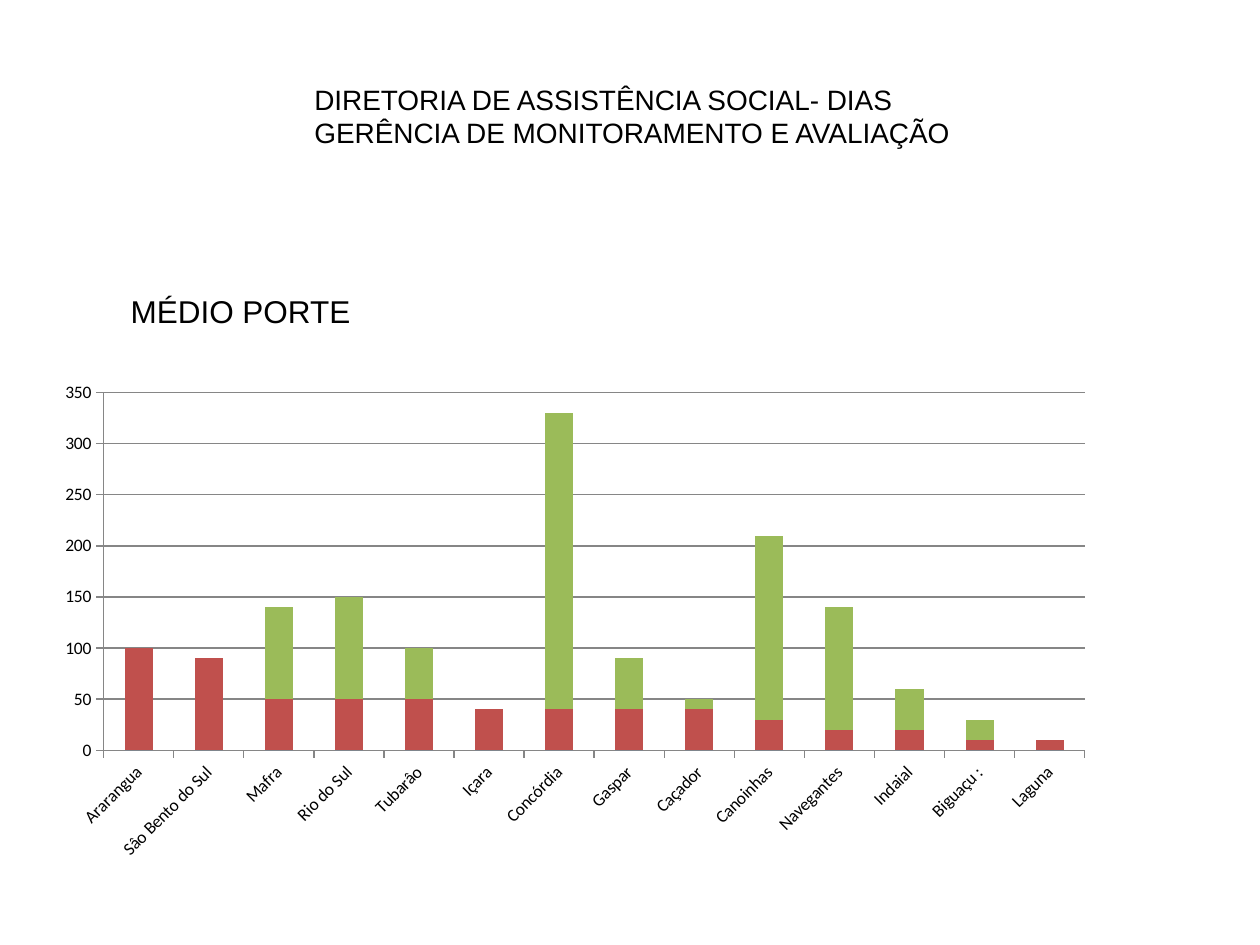
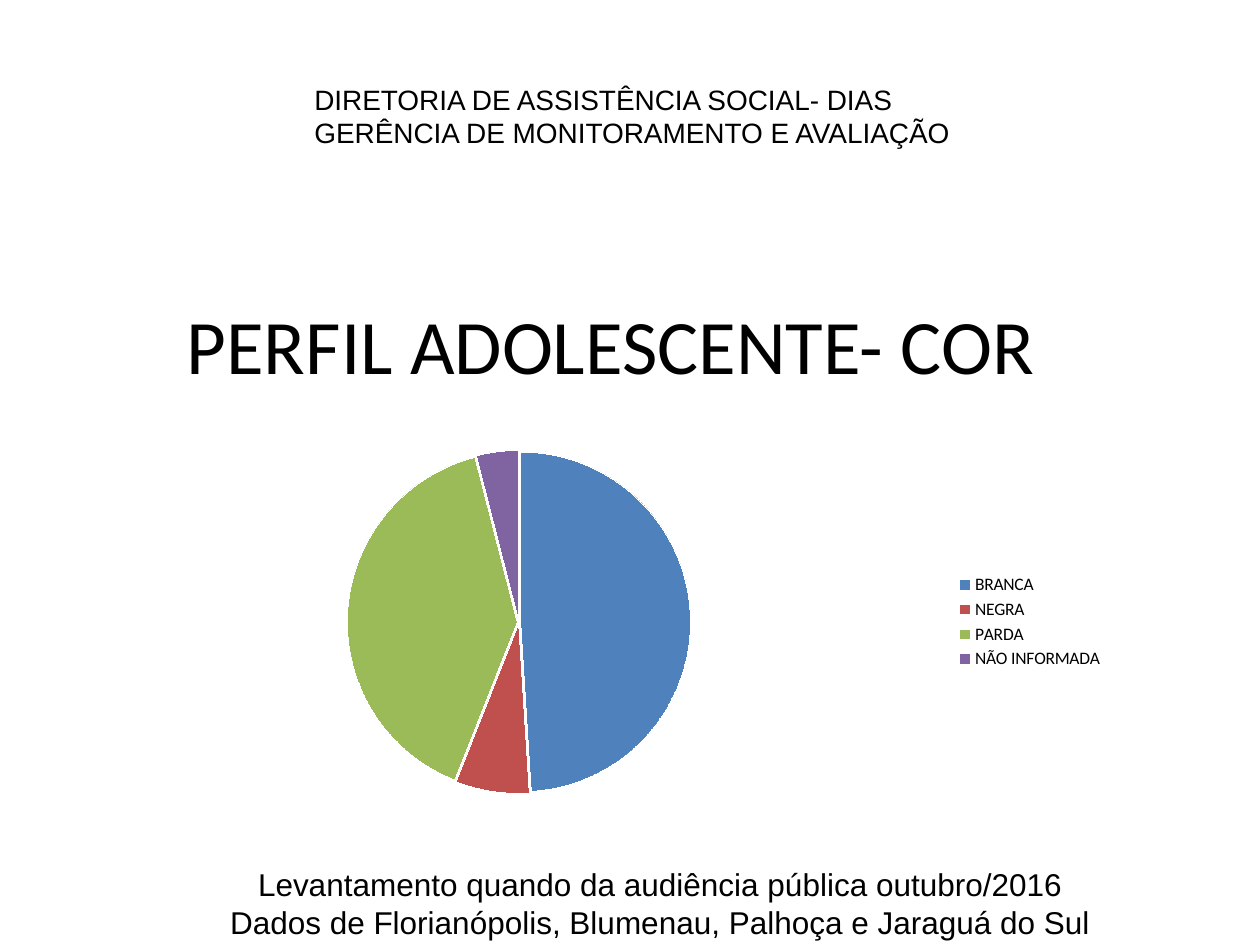
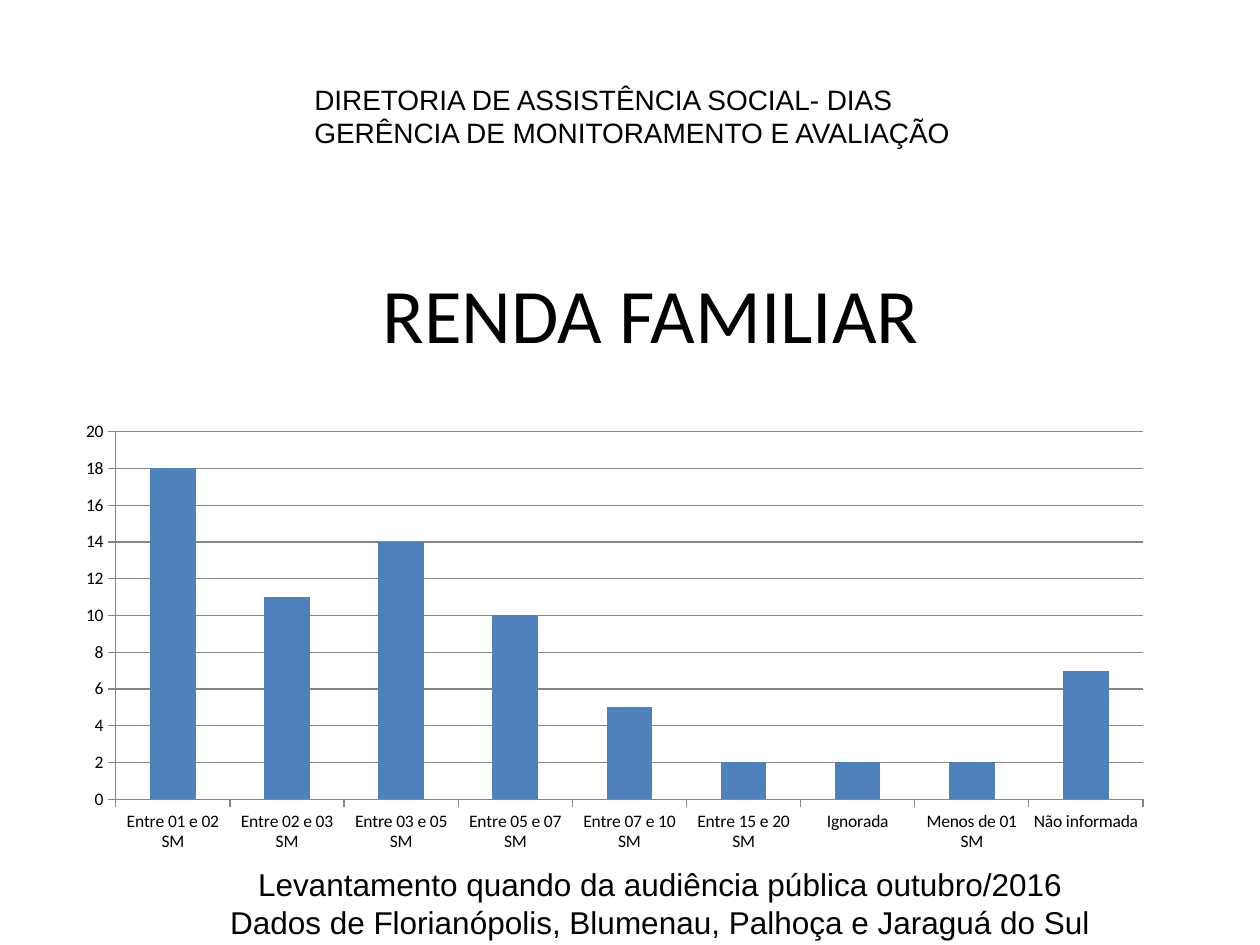
from lxml import etree
from pptx import Presentation
from pptx import util as u
from pptx.chart.data import CategoryChartData
from pptx.dml.color import RGBColor
from pptx.enum import chart as charts
from pptx.enum import text
from pptx.oxml.ns import qn

PX_PER_INCH = 126
TITLE_ONLY = 5

BLACK = RGBColor(0x00, 0x00, 0x00)
WHITE = RGBColor(0xFF, 0xFF, 0xFF)
AXIS_GREY = RGBColor(0x86, 0x86, 0x86)
BLUE = RGBColor(0x4F, 0x81, 0xBD)
RED = RGBColor(0xC0, 0x50, 0x4D)
GREEN = RGBColor(0x9B, 0xBB, 0x59)
PURPLE = RGBColor(0x80, 0x64, 0xA2)
PALETTE = (BLUE, RED, GREEN, PURPLE)

HEADER_BOX = (302, 76, 665, 81)
HEADER = "DIRETORIA DE ASSISTÊNCIA SOCIAL- DIAS\nGERÊNCIA DE MONITORAMENTO E AVALIAÇÃO"
SOURCE_BOX = (144, 859, 1032, 89)
SOURCE = ("Levantamento quando da audiência pública outubro/2016\n"
          "Dados de Florianópolis, Blumenau, Palhoça e Jaraguá do Sul")

CITIES = {
    "Ararangua": (0, 100, 0),
    "Sâo Bento do Sul": (0, 90, 0),
    "Mafra": (0, 50, 90),
    "Rio do Sul": (0, 50, 100),
    "Tubarâo": (0, 50, 50),
    "Içara": (0, 40, 0),
    "Concórdia": (0, 40, 290),
    "Gaspar": (0, 40, 50),
    "Caçador": (0, 40, 10),
    "Canoinhas": (0, 30, 180),
    "Navegantes": (0, 20, 120),
    "Indaial": (0, 20, 40),
    "Biguaçu :": (0, 10, 20),
    "Laguna": (0, 10, 0),
}
SKIN_COLOURS = {"BRANCA": (49,), "NEGRA": (7,), "PARDA": (40,), "NÃO INFORMADA": (4,)}
INCOMES = {
    "Entre 01 e 02 SM": (18,),
    "Entre 02 e 03 SM": (11,),
    "Entre 03 e 05 SM": (14,),
    "Entre 05 e 07 SM": (10,),
    "Entre 07 e 10 SM": (5,),
    "Entre 15 e 20 SM": (2,),
    "Ignorada": (2,),
    "Menos de 01 SM": (2,),
    "Não informada": (7,),
}


def emu(box):
    return [u.Inches(px / PX_PER_INCH) for px in box]


def write(frame, words, size, font="Arial", align=text.PP_ALIGN.LEFT):
    frame.text = words
    for paragraph in frame.paragraphs:
        paragraph.alignment = align
        for run in paragraph.runs:
            run.font.name, run.font.size = font, u.Pt(size)
            run.font.color.rgb = BLACK


def add_text(slide, box, words, size, align=text.PP_ALIGN.LEFT):
    label = slide.shapes.add_textbox(*emu(box))
    label.text_frame.word_wrap = True
    write(label.text_frame, words, size, align=align)
    return label


def add_master_header(prs, slide):
    """Build the header on a slide, then move it to the master all slides share."""
    header = add_text(slide, HEADER_BOX, HEADER, 16)
    prs.slide_master.shapes.element.append(header.element)


def place_title(slide, box, words, size=44, font="Calibri", align=text.PP_ALIGN.CENTER):
    title = slide.shapes.title
    title.left, title.top, title.width, title.height = emu(box)
    title.text_frame.auto_size = text.MSO_AUTO_SIZE.NONE
    title.text_frame.vertical_anchor = text.MSO_ANCHOR.MIDDLE
    write(title.text_frame, words, size, font, align)


def add_source(slide):
    add_text(slide, SOURCE_BOX, SOURCE, 18, text.PP_ALIGN.CENTER)


def add_chart(slide, box, kind, rows):
    """Chart rows of {category: (value of each series, ...)}."""
    data = CategoryChartData()
    data.categories = list(rows)
    for number, values in enumerate(zip(*rows.values()), 1):
        data.add_series(f"Series {number}", values)
    chart = slide.shapes.add_chart(kind, *emu(box), data).chart
    chart.has_title = chart.has_legend = False
    chart.font.name, chart.font.size = "Calibri", u.Pt(10)
    chart.font.color.rgb = BLACK
    return chart


def fill(part, colour):
    part.format.fill.solid()
    part.format.fill.fore_color.rgb = colour


def add_columns(slide, box, kind, rows, top, step):
    chart = add_chart(slide, box, kind, rows)
    plot = chart.plots[0]
    plot.vary_by_categories = False
    plot.gap_width = 150
    if kind == charts.XL_CHART_TYPE.COLUMN_STACKED:
        plot.overlap = 100
    for series, colour in zip(plot.series, PALETTE):
        fill(series, colour)

    scale = chart.value_axis
    scale.minimum_scale, scale.maximum_scale, scale.major_unit = 0, top, step
    scale.has_major_gridlines = True
    for axis in (chart.category_axis, scale):
        axis.major_tick_mark = charts.XL_TICK_MARK.OUTSIDE
    for lined in (chart.category_axis, scale, scale.major_gridlines):
        lined.format.line.color.rgb = AXIS_GREY
        lined.format.line.width = u.Pt(0.75)


def add_pie(slide, box, rows):
    chart = add_chart(slide, box, charts.XL_CHART_TYPE.PIE, rows)
    plot = chart.plots[0]
    plot.vary_by_categories = True
    for index, colour in enumerate(PALETTE):
        slice_ = plot.series[0].points[index]
        fill(slice_, colour)
        slice_.format.line.color.rgb = WHITE
    explosion = etree.Element(qn("c:explosion"), val="1")
    chart.element.find(".//" + qn("c:dPt")).addprevious(explosion)
    chart.has_legend = True
    chart.legend.position = charts.XL_LEGEND_POSITION.RIGHT
    chart.legend.include_in_layout = False


def build_cities(slide):
    place_title(slide, (118, 286, 246, 50), "MÉDIO PORTE", 18, "Arial", text.PP_ALIGN.LEFT)
    slide.shapes.title.text_frame.word_wrap = False
    add_columns(slide, (44, 373, 1062, 496), charts.XL_CHART_TYPE.COLUMN_STACKED,
                CITIES, top=350, step=50)


def build_skin_colours(slide):
    place_title(slide, (44, 265, 1134, 158), "PERFIL ADOLESCENTE- COR")
    add_pie(slide, (84, 433, 1032, 378), SKIN_COLOURS)
    add_source(slide)


def build_incomes(slide):
    place_title(slide, (84, 234, 1134, 158), "RENDA FAMILIAR")
    add_columns(slide, (64, 413, 1101, 447), charts.XL_CHART_TYPE.COLUMN_CLUSTERED,
                INCOMES, top=20, step=2)
    add_source(slide)


def main():
    prs = Presentation()
    prs.slide_width, prs.slide_height = u.Inches(10), u.Inches(7.5)
    for build in (build_cities, build_skin_colours, build_incomes):
        build(prs.slides.add_slide(prs.slide_layouts[TITLE_ONLY]))
    add_master_header(prs, prs.slides[0])
    prs.save("out.pptx")


if __name__ == "__main__":
    main()
